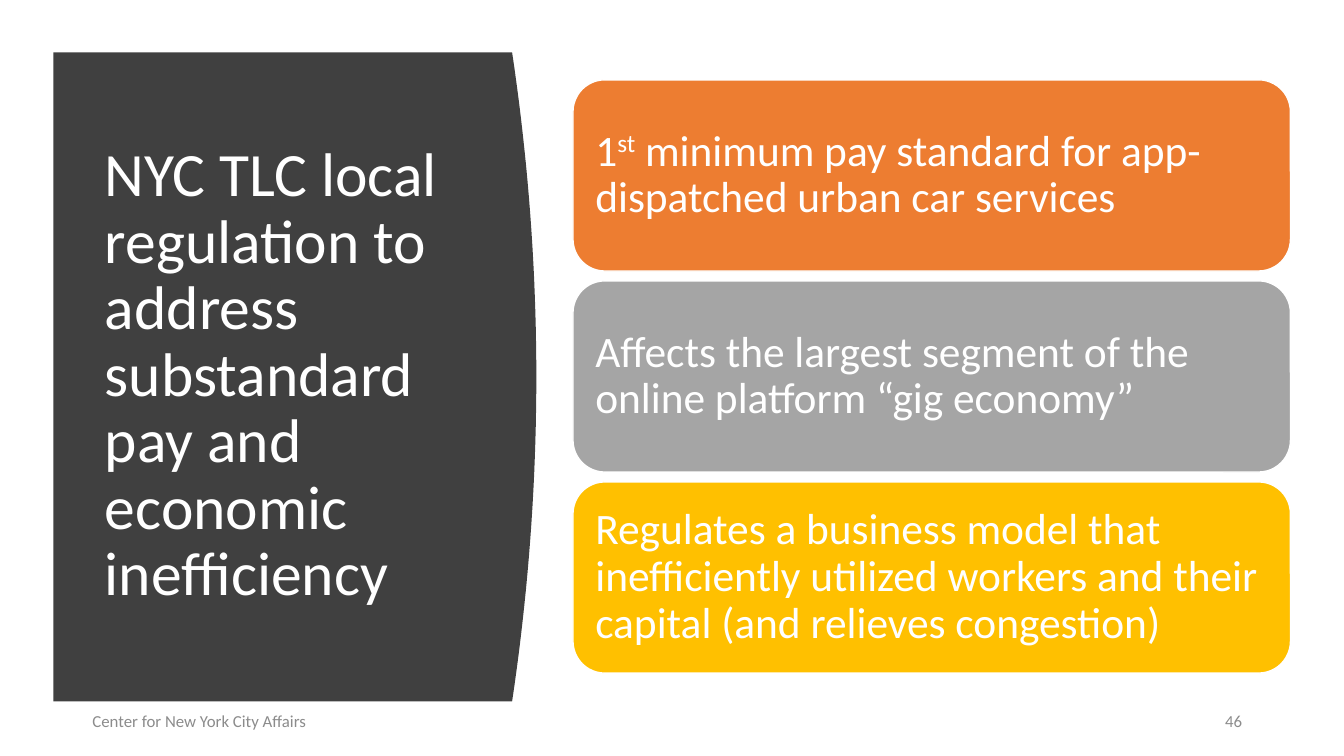
import pptx
import pptx.util
import pptx.dml.color
import pptx.enum.shapes
import pptx.enum.text

Pt = pptx.util.Pt
ALIGN = pptx.enum.text.PP_ALIGN
ANCHOR = pptx.enum.text.MSO_ANCHOR

TITLE = "NYC TLC local regulation to address substandard pay and economic inefficiency"
CARDS = [
    ("ED7D31", [("1", False), ("st", True),
                (" minimum pay standard for app-dispatched urban car services", False)]),
    ("A5A5A5", [("Affects the largest segment of the online platform “gig economy”", False)]),
    ("FFC000", [("Regulates a business model that inefficiently utilized workers "
                 "and their capital (and relieves congestion)", False)]),
]
FOOTERS = [
    ("Center for New York City Affairs", 59, 324, ALIGN.LEFT),
    ("46", 844.6, 49.7, ALIGN.RIGHT),
]
PANEL_LEFT, PANEL_TOP, PANEL_RIGHT, PANEL_BOTTOM = 38.2, 37.4, 365.8, 501.1
PANEL_BULGE, PANEL_STEPS = 17.3, 40
CARD_LEFT, CARD_TOP, CARD_WIDTH, CARD_HEIGHT, CARD_PITCH = 409.3, 57, 512.5, 136.6, 143.6


def color(hex_text):
    return pptx.dml.color.RGBColor.from_string(hex_text)


def fill_shape(shape, hex_text):
    shape.shadow.inherit = False
    shape.fill.solid()
    shape.fill.fore_color.rgb = color(hex_text)


def format_paragraph(paragraph, size, hex_text, alignment=ALIGN.LEFT):
    paragraph.alignment = alignment
    paragraph.font.name = "Calibri"
    paragraph.font.size = Pt(size)
    paragraph.font.color.rgb = color(hex_text)


def add_panel(slide):
    height = PANEL_BOTTOM - PANEL_TOP
    edge = []
    for step in range(PANEL_STEPS + 1):
        share = step / PANEL_STEPS
        bulge = PANEL_BULGE * 4 * share * (1 - share)
        edge.append((Pt(PANEL_RIGHT + bulge), Pt(PANEL_TOP + height * share)))
    builder = slide.shapes.build_freeform(Pt(PANEL_LEFT), Pt(PANEL_TOP))
    builder.add_line_segments(edge + [(Pt(PANEL_LEFT), Pt(PANEL_BOTTOM))], close=True)
    panel = builder.convert_to_shape()
    fill_shape(panel, "404040")
    panel.line.fill.background()


def add_title(slide):
    title = slide.shapes.title
    title.left, title.top, title.width, title.height = Pt(67.7), Pt(80), Pt(269.3), Pt(377.3)
    frame = title.text_frame
    frame.text = TITLE
    frame.word_wrap = True
    frame.auto_size = pptx.enum.text.MSO_AUTO_SIZE.NONE
    frame.vertical_anchor = ANCHOR.MIDDLE
    paragraph = frame.paragraphs[0]
    paragraph.line_spacing = 0.9
    format_paragraph(paragraph, 44, "FFFFFF")


def add_card(slide, index, fill, runs):
    card = slide.shapes.add_shape(
        pptx.enum.shapes.MSO_SHAPE.ROUNDED_RECTANGLE,
        Pt(CARD_LEFT), Pt(CARD_TOP + index * CARD_PITCH), Pt(CARD_WIDTH), Pt(CARD_HEIGHT))
    fill_shape(card, fill)
    card.line.color.rgb = color("FFFFFF")
    card.line.width = Pt(1)
    frame = card.text_frame
    frame.word_wrap = True
    frame.vertical_anchor = ANCHOR.MIDDLE
    frame.margin_left = frame.margin_right = frame.margin_top = frame.margin_bottom = Pt(9.3)
    paragraph = frame.paragraphs[0]
    paragraph.line_spacing = 0.9
    format_paragraph(paragraph, 31, "FFFFFF")
    for text, raised in runs:
        run = paragraph.add_run()
        run.text = text
        if raised:
            run._r.get_or_add_rPr().set("baseline", "30000")


def add_footer(slide, text, left, width, alignment):
    footer = slide.shapes.add_textbox(Pt(left), Pt(500.5), Pt(width), Pt(28.8))
    frame = footer.text_frame
    frame.text = text
    frame.word_wrap = True
    frame.vertical_anchor = ANCHOR.MIDDLE
    paragraph = frame.paragraphs[0]
    paragraph.space_after = Pt(6)
    format_paragraph(paragraph, 12, "8C8C8C", alignment)


def main():
    presentation = pptx.Presentation()
    presentation.slide_width, presentation.slide_height = Pt(960), Pt(540)
    slide = presentation.slides.add_slide(presentation.slide_layouts[5])
    add_panel(slide)
    add_title(slide)
    title_element = slide.shapes.title.element
    title_element.getparent().append(title_element)
    for text, left, width, alignment in FOOTERS:
        add_footer(slide, text, left, width, alignment)
    for index, (fill, runs) in enumerate(CARDS):
        add_card(slide, index, fill, runs)
    presentation.save("out.pptx")


if __name__ == "__main__":
    main()
